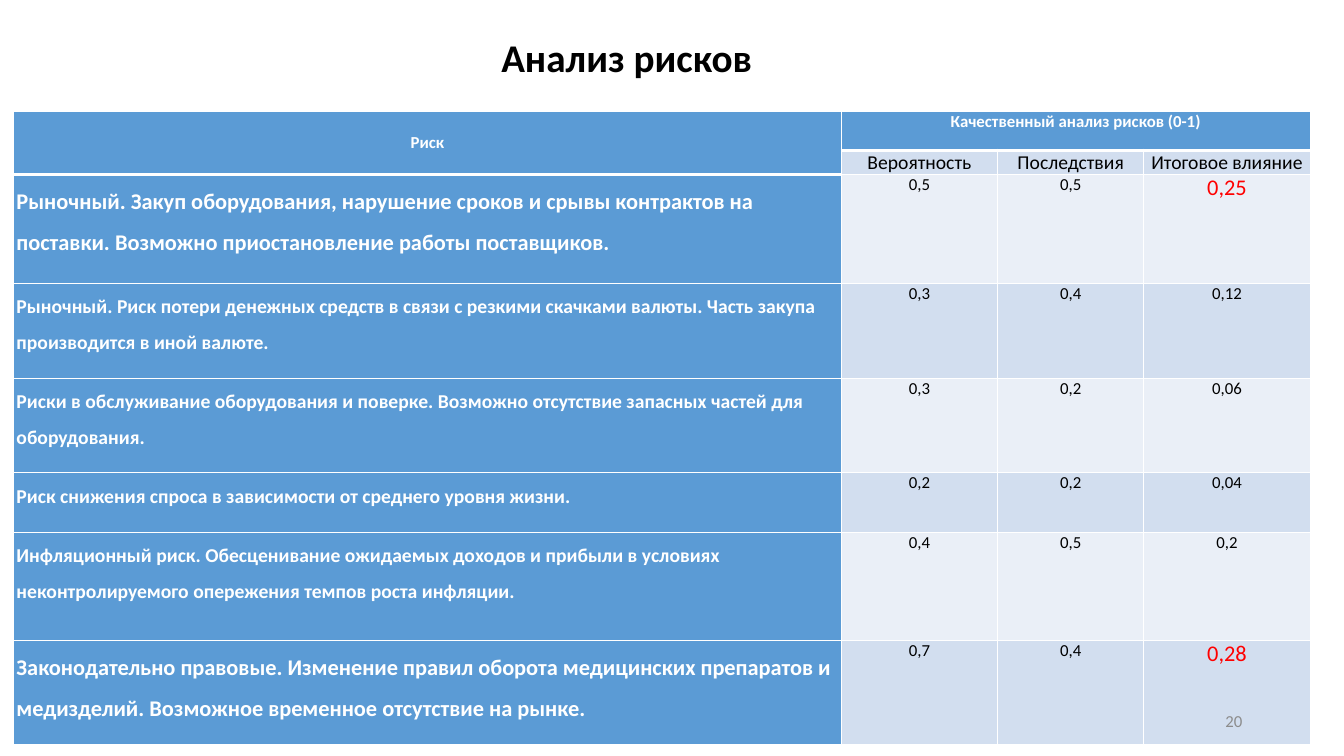
from dataclasses import dataclass

from lxml.etree import SubElement
from pptx import Presentation
from pptx.dml.color import RGBColor
from pptx.enum.text import MSO_ANCHOR, PP_ALIGN
from pptx.oxml.ns import qn
from pptx.util import Inches, Pt


@dataclass(frozen=True)
class Theme:
    font: str = "Calibri"
    black: str = "000000"
    white: str = "FFFFFF"
    accent: str = "5B9BD5"
    band_dark: str = "D2DEEF"
    band_light: str = "EAEFF7"
    alert: str = "FF0000"
    muted: str = "8C8C8C"
    title: int = 28
    large: int = 16
    medium: int = 14
    small: int = 12
    thin_rule: int = 1
    heavy_rule: int = 3
    cell_inset: float = 0.03


class RiskPage:
    """Draws on one blank slide; lengths are percentages of its width and height."""

    def __init__(self, deck, theme):
        self.deck = deck
        self.theme = theme
        self.page = deck.slides.add_slide(deck.slide_layouts[6])

    def across(self, share):
        return round(self.deck.slide_width * share / 100)

    def down(self, share):
        return round(self.deck.slide_height * share / 100)

    def add_words(self, frame, text, size, color, bold=False,
                  align=PP_ALIGN.CENTER, spacing=1.0):
        para = frame.paragraphs[0]
        para.alignment = align
        para.line_spacing = spacing
        span = para.add_run()
        span.text = text
        span.font.name = self.theme.font
        span.font.size = Pt(size)
        span.font.bold = bold
        span.font.color.rgb = RGBColor.from_string(color)

    def add_label(self, left, top, width, height, text, size, color, **style):
        box = self.page.shapes.add_textbox(
            self.across(left), self.down(top), self.across(width), self.down(height))
        frame = box.text_frame
        frame.word_wrap = True
        frame.vertical_anchor = MSO_ANCHOR.MIDDLE
        self.add_words(frame, text, size, color, **style)

    def add_grid(self, left, top, columns, rows):
        table = self.page.shapes.add_table(
            len(rows), len(columns), self.across(left), self.down(top),
            self.across(sum(columns)), self.down(sum(rows))).table
        for column, share in zip(table.columns, columns):
            column.width = self.across(share)
        for row, share in zip(table.rows, rows):
            row.height = self.down(share)
        for row in range(len(rows)):
            for column in range(len(columns)):
                self.format_cell(table.cell(row, column), row, column)
        return table

    def format_cell(self, cell, row, column):
        """Sets insets, rules and the banded fill of one cell."""
        theme = self.theme
        cell.margin_left = cell.margin_right = Inches(theme.cell_inset)
        cell.margin_top = cell.margin_bottom = 0
        self.add_rule(cell, "a:lnL", theme.thin_rule)
        self.add_rule(cell, "a:lnR", theme.thin_rule)
        self.add_rule(cell, "a:lnT", self.rule_below(row - 1, column))
        self.add_rule(cell, "a:lnB", self.rule_below(row, column))
        header = row == 0 or column == 0
        band = theme.band_dark if row % 2 else theme.band_light
        cell.fill.solid()
        cell.fill.fore_color.rgb = RGBColor.from_string(theme.accent if header else band)

    def rule_below(self, row, column):
        """Gives the width of the rule under a cell: heavy under the header."""
        under_header = row == 0 or (row == 1 and column == 0)
        return self.theme.heavy_rule if under_header else self.theme.thin_rule

    def add_rule(self, cell, side, width):
        line = SubElement(cell._tc.get_or_add_tcPr(), qn(side), w=str(Pt(width)))
        fill = SubElement(line, qn("a:solidFill"))
        SubElement(fill, qn("a:srgbClr"), val=self.theme.white)


RISKS = [
    ("Рыночный. Закуп оборудования, нарушение сроков и срывы контрактов на поставки. "
     "Возможно приостановление работы поставщиков.", "0,5", "0,5", "0,25", True),
    ("Рыночный. Риск потери денежных средств в связи с резкими скачками валюты. "
     "Часть закупа производится в иной валюте.", "0,3", "0,4", "0,12", False),
    ("Риски в обслуживание оборудования и поверке. Возможно отсутствие запасных "
     "частей для оборудования.", "0,3", "0,2", "0,06", False),
    ("Риск снижения спроса в зависимости от среднего уровня жизни.",
     "0,2", "0,2", "0,04", False),
    ("Инфляционный риск. Обесценивание ожидаемых доходов и прибыли в условиях "
     "неконтролируемого опережения темпов роста инфляции.", "0,4", "0,5", "0,2", False),
    ("Законодательно правовые. Изменение правил оборота медицинских препаратов и "
     "медизделий. Возможное временное отсутствие на рынке.", "0,7", "0,4", "0,28", True),
]
MEASURES = ["Вероятность", "Последствия", "Итоговое влияние"]
COLUMN_SHARES = [61.6, 11.63, 10.88, 12.38]
ROW_SHARES = [5.2, 3.2, 14.4, 12.53, 12.53, 7.87, 14.27, 13.87]


def main():
    deck = Presentation()
    deck.slide_width, deck.slide_height = Inches(13.33), Inches(7.5)
    theme = Theme()
    page = RiskPage(deck, theme)

    page.add_label(3.5, 2.5, 86.25, 10.8, "Анализ рисков", theme.title, theme.black,
                   bold=True, spacing=0.9)

    table = page.add_grid(1, 14.7, COLUMN_SHARES, ROW_SHARES)
    risk_header, analysis_header = table.cell(0, 0), table.cell(0, 1)
    risk_header.merge(table.cell(1, 0))
    analysis_header.merge(table.cell(0, 3))
    risk_header.vertical_anchor = MSO_ANCHOR.MIDDLE
    page.add_words(risk_header.text_frame, "Риск", theme.small, theme.white, bold=True)
    page.add_words(analysis_header.text_frame, "Качественный анализ рисков (0-1)",
                   theme.small, theme.white, bold=True)
    for column, measure in enumerate(MEASURES, start=1):
        page.add_words(table.cell(1, column).text_frame, measure, theme.medium, theme.black)

    for row, (risk, probability, effect, impact, critical) in enumerate(RISKS, start=2):
        page.add_words(table.cell(row, 0).text_frame, risk,
                       theme.large if critical else theme.medium, theme.white,
                       bold=True, align=PP_ALIGN.LEFT, spacing=1.5)
        for column, value in enumerate((probability, effect), start=1):
            page.add_words(table.cell(row, column).text_frame, value,
                           theme.small, theme.black)
        page.add_words(table.cell(row, 3).text_frame, impact,
                       theme.large if critical else theme.small,
                       theme.alert if critical else theme.black)

    page.add_label(70.67, 92.67, 22.5, 5.33, "20", theme.small, theme.muted,
                   align=PP_ALIGN.RIGHT)
    deck.save("out.pptx")


if __name__ == "__main__":
    main()
